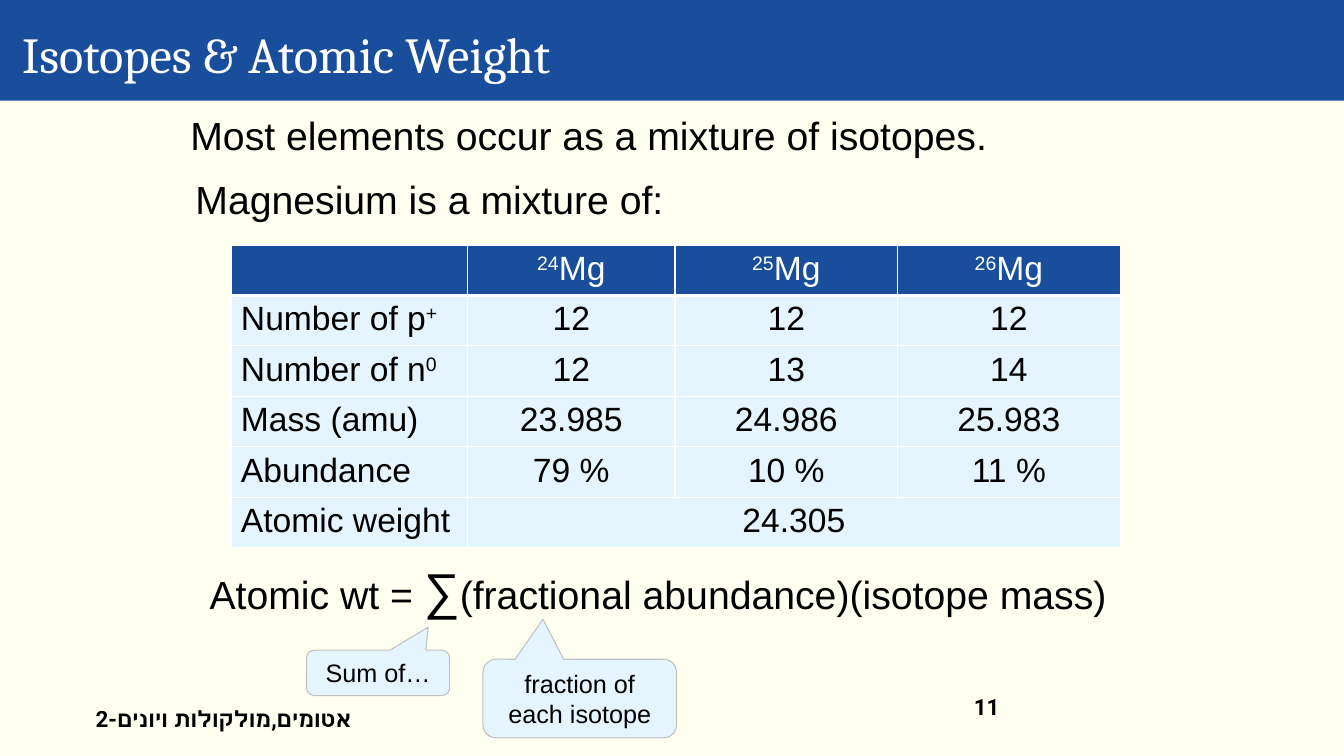
from lxml.etree import SubElement
from pptx import Presentation
from pptx.dml.color import RGBColor
from pptx.enum.shapes import MSO_SHAPE
from pptx.enum.text import MSO_ANCHOR, PP_ALIGN
from pptx.oxml.ns import qn
from pptx.util import Inches, Pt

COLORS = {"blue": "194E9D", "cream": "FFFFEF", "pale": "E5F5FF",
          "white": "FFFFFF", "black": "000000", "gray": "C0C0C0"}
ISOTOPES = [("24", "12", "12", "23.985", "79 %"),
            ("25", "12", "13", "24.986", "10 %"),
            ("26", "12", "14", "25.983", "11 %")]
PROPERTIES = [("Number of p", "+"), ("Number of n", "0"), ("Mass (amu)", ""),
              ("Abundance", ""), ("Atomic weight", "")]
COLUMN_SHARES = (2.35, 2.06, 2.21, 2.21)


def color(key):
    """Return the palette colour for a key."""
    return RGBColor.from_string(COLORS[key])


def write(frame, text, size=28, font="Arial", ink="black", bold=False,
          align=PP_ALIGN.LEFT, raised=False):
    """Append a formatted run to the first paragraph of a frame."""
    paragraph = frame.paragraphs[0]
    paragraph.alignment = align
    run = paragraph.add_run()
    run.text = text
    run.font.size = Pt(size)
    run.font.name = font
    run.font.bold = bold
    run.font.color.rgb = color(ink)
    properties = run.font._element
    SubElement(properties, qn("a:cs"), typeface=font)
    if raised:
        properties.set("baseline", "30000")


def add_frame(slide, box, anchor=MSO_ANCHOR.TOP, wrap=True):
    """Add a text box and return its text frame."""
    frame = slide.shapes.add_textbox(*map(Inches, box)).text_frame
    frame.word_wrap = wrap
    frame.vertical_anchor = anchor
    return frame


def add_panel(slide, box, fill, preset=MSO_SHAPE.RECTANGLE, outline=None):
    """Add a flat filled shape with an optional thin outline."""
    panel = slide.shapes.add_shape(preset, *map(Inches, box))
    panel.shadow.inherit = False
    panel.fill.solid()
    panel.fill.fore_color.rgb = color(fill)
    if outline:
        panel.line.color.rgb = color(outline)
        panel.line.width = Pt(0.75)
    else:
        panel.line.fill.background()
    return panel


def add_header(slide, box):
    """Draw the title band and its heading."""
    left, top, width, height = box
    add_panel(slide, box, "blue")
    heading = add_frame(slide, (left + 0.12, top + 0.08, width - 0.45, height - 0.1),
                        MSO_ANCHOR.MIDDLE)
    write(heading, "Isotopes & Atomic Weight", size=36, font="Cambria", ink="white")


def add_intro(slide, box):
    """Place the two introductory sentences."""
    left, top, width, height = box
    write(add_frame(slide, (left, top, width, height)),
          "Most elements occur as a mixture of isotopes.")
    write(add_frame(slide, (left + 0.05, top + 0.63, width, height)),
          "Magnesium is a mixture of:")


def style_cell(cell, fill, top=1, bottom=1):
    """Give a table cell white borders and a solid fill."""
    properties = cell._tc.get_or_add_tcPr()
    for side, points in (("L", 1), ("R", 1), ("T", top), ("B", bottom)):
        border = SubElement(properties, qn(f"a:ln{side}"), w=str(Pt(points)))
        solid = SubElement(border, qn("a:solidFill"))
        SubElement(solid, qn("a:srgbClr"), val=COLORS["white"])
    cell.fill.solid()
    cell.fill.fore_color.rgb = color(fill)


def add_isotope_table(slide, box):
    """Build the table of magnesium isotopes."""
    rows, columns = len(PROPERTIES) + 1, len(ISOTOPES) + 1
    table = slide.shapes.add_table(rows, columns, *map(Inches, box)).table
    for column, share in zip(table.columns, COLUMN_SHARES):
        column.width = Inches(box[2] * share / sum(COLUMN_SHARES))
    for row in range(rows):
        for column in range(columns):
            style_cell(table.cell(row, column), "pale" if row else "blue",
                       top=3 if row == 1 else 1, bottom=1 if row else 3)
    for row, (label, exponent) in enumerate(PROPERTIES, 1):
        frame = table.cell(row, 0).text_frame
        write(frame, label, size=24)
        if exponent:
            write(frame, exponent, size=24, raised=True)
    for column, (mass_number, *values) in enumerate(ISOTOPES, 1):
        header = table.cell(0, column).text_frame
        write(header, mass_number, size=24, ink="white", align=PP_ALIGN.CENTER, raised=True)
        write(header, "Mg", size=24, ink="white", align=PP_ALIGN.CENTER)
        for row, value in enumerate(values, 1):
            write(table.cell(row, column).text_frame, value, size=24, align=PP_ALIGN.CENTER)
    average = table.cell(rows - 1, 1)
    average.merge(table.cell(rows - 1, columns - 1))
    write(average.text_frame, "24.305", size=24, align=PP_ALIGN.CENTER)


def add_callout(slide, box, text, pointer):
    """Add a rounded callout whose tip is set by relative offsets."""
    callout = add_panel(slide, box, "pale", MSO_SHAPE.ROUNDED_RECTANGULAR_CALLOUT, "gray")
    for index, offset in enumerate((*pointer, 0.167)):
        callout.adjustments[index] = offset
    callout.text_frame.word_wrap = True
    callout.text_frame.vertical_anchor = MSO_ANCHOR.MIDDLE
    write(callout.text_frame, text, size=18, align=PP_ALIGN.CENTER)


def add_formula(slide, box):
    """Place the atomic weight formula and the callouts below it."""
    left, top, width, height = box
    formula = add_frame(slide, box, wrap=False)
    for text, size in (("Atomic wt = ", 28), ("∑", 36),
                       ("(fractional abundance)(isotope mass)", 28)):
        write(formula, text, size=size, align=PP_ALIGN.CENTER)
    add_callout(slide, (left + 2.87, top + 1.04, 1.92, 0.78),
                "fraction of each isotope", (-0.19, -1.01))
    add_callout(slide, (left + 1.12, top + 0.95, 1.42, 0.45), "Sum of…", (0.35, -1.01))


def add_footer(slide, box):
    """Place the chapter name and the page number."""
    left, top, width, height = box
    write(add_frame(slide, (left + 8.71, top, 2.78, height)), "11",
          size=16, font="Roboto", bold=True)
    write(add_frame(slide, (left, top + 0.12, 6.89, height)),
          "2-אטומים,מולקולות ויונים", size=16, font="Roboto", bold=True)


def main():
    """Build and save the slide."""
    deck = Presentation()
    deck.slide_width, deck.slide_height = Inches(13.33), Inches(7.5)
    slide = deck.slides.add_slide(deck.slide_layouts[6])
    add_panel(slide, (0, 0, 13.33, 7.5), "cream")
    add_header(slide, (0, 0, 13.33, 1))
    add_intro(slide, (1.79, 1.06, 9.83, 0.63))
    add_isotope_table(slide, (2.29, 2.43, 8.82, 3))
    add_formula(slide, (1.92, 5.5, 9.21, 0.7))
    add_footer(slide, (0.85, 6.83, 11.49, 0.5))
    deck.save("out.pptx")


if __name__ == "__main__":
    main()
